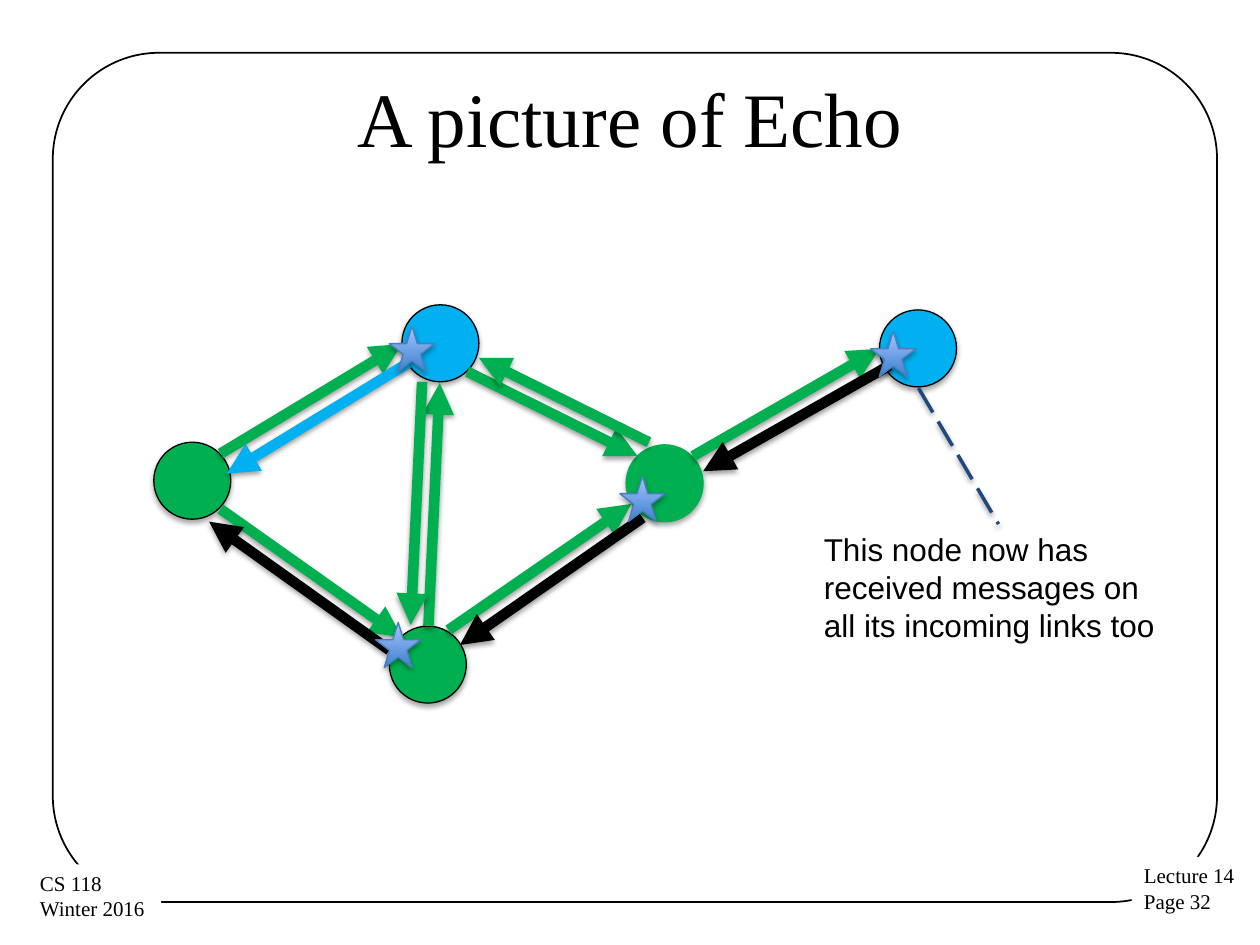
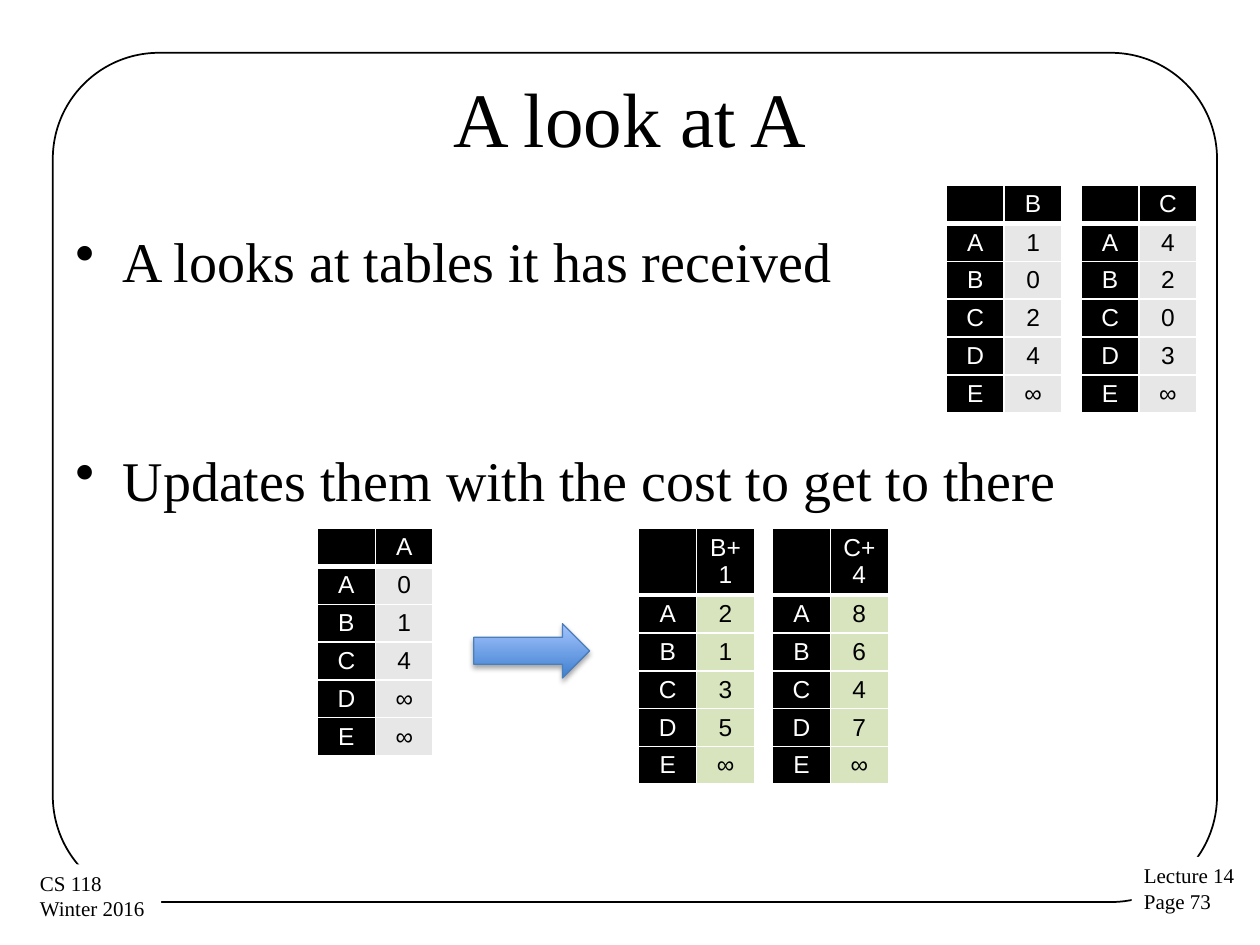
"""Builds two lecture slides: the Echo protocol graph and the distance tables at A."""
from lxml.etree import SubElement
from pptx import Presentation
from pptx.dml.color import RGBColor
from pptx.enum.dml import MSO_LINE
from pptx.enum.shapes import MSO_CONNECTOR, MSO_SHAPE
from pptx.enum.text import MSO_ANCHOR, PP_ALIGN
from pptx.oxml.ns import qn
from pptx.util import Pt

SERIF, SANS = "Times New Roman", "Arial"
BLACK, WHITE, GREEN, BLUE = "000000", "FFFFFF", "00B050", "00B0F0"
GREY, LIME, NAVY, EDGE = "E7E7E7", "D7E4BD", "1F497D", "4B7EBC"
DARK, LIGHT = "3F80CE", "A4C4FF"

COURSE = ["CS 118", "Winter 2016"]
LECTURE = "Lecture 14"

NODE, STAR = 44, 25.9
NODES = [
    (87.9, 252.7, GREEN, BLACK),
    (229.7, 174.2, BLUE, BLACK),
    (357.8, 254.2, GREEN, GREEN),
    (502.6, 177.1, BLUE, BLACK),
    (222.5, 357.8, GREEN, BLACK),
]
LINKS = [
    (126, 259.2, 229.7, 196.6, GREEN),
    (267.1, 212.4, 364.3, 260.6, GREEN),
    (126, 290.9, 229.7, 364.3, GREEN),
    (396, 260.6, 502.6, 199.4, GREEN),
    (256.3, 360, 360.7, 288, GREEN),
    (244.8, 357.8, 251.3, 218.9, GREEN),
    (233.3, 207.4, 129.6, 270.7, BLUE),
    (241.2, 218.2, 234.7, 357.1, GREEN),
    (370.8, 252.7, 273.6, 204.5, GREEN),
    (367.2, 295.9, 262.8, 368.6, BLACK),
    (508.3, 208.8, 401.8, 269.3, BLACK),
    (222.5, 371.5, 119.5, 298.1, BLACK),
]
STARS = [(222.5, 186.5), (214.6, 355.7), (354.2, 272.2), (497.5, 189.4)]
NOTE = ["This node now has", "received messages on all its incoming links too"]

POINTS = ["A looks at tables it has received", "Updates them with the cost to get to there"]
COL, HEAD, ROW = 33.1, 22, 21
TABLES = [
    (617.8, 105.8, "C", "4203∞", GREY),
    (540.7, 105.8, "B", "1024∞", GREY),
    (181.4, 301.7, "A", "014∞∞", GREY),
    (441.4, 301.7, "C+4", "8647∞", LIME),
    (365, 301.7, "B+1", "2135∞", LIME),
]


def rgb(code):
    """Turn a hex string into a colour."""
    return RGBColor.from_string(code)


def paint(fill, code):
    """Give a fill one solid colour."""
    fill.solid()
    fill.fore_color.rgb = rgb(code)


def style(para, size, face, code, align=PP_ALIGN.LEFT):
    """Set the font and alignment of a paragraph."""
    font = para.font
    font.size, font.name, font.color.rgb = Pt(size), face, rgb(code)
    para.alignment = align


def write(slide, box, lines, size, face, align=PP_ALIGN.LEFT, wrap=True):
    """Add a text box with one paragraph per line."""
    item = slide.shapes.add_textbox(*map(Pt, box))
    frame = item.text_frame
    frame.word_wrap = wrap
    frame.text = "\n".join(lines)
    for para in frame.paragraphs:
        style(para, size, face, BLACK, align)
    return item


def shade(item, alpha, dist):
    """Put a soft black shadow below a shape or connector."""
    effects = SubElement(item._element.spPr, qn("a:effectLst"))
    outer = SubElement(effects, qn("a:outerShdw"), blurRad=str(Pt(3.1)),
                       dist=str(Pt(dist)), dir="5400000", rotWithShape="0")
    tint = SubElement(outer, qn("a:srgbClr"), val=BLACK)
    SubElement(tint, qn("a:alpha"), val=str(alpha * 1000))


def draw(slide, kind, box, fill, edge):
    """Add a shadowed shape, with the blue gradient if no fill is given."""
    item = slide.shapes.add_shape(kind, *map(Pt, box))
    if fill:
        paint(item.fill, fill)
    else:
        item.fill.gradient()
        item.fill.gradient_angle = 90
        for stop, code, place in zip(item.fill.gradient_stops, (DARK, LIGHT), (0, 1)):
            stop.color.rgb, stop.position = rgb(code), place
    item.line.color.rgb, item.line.width = rgb(edge), Pt(0.75)
    shade(item, 35, 1.8)


def link(slide, ends, code, width, goal=None):
    """Add an arrow, or a dashed line that is joined to the top of a goal."""
    item = slide.shapes.add_connector(MSO_CONNECTOR.STRAIGHT, *map(Pt, ends))
    item.line.color.rgb, item.line.width = rgb(code), Pt(width)
    if goal:
        item.line.dash_style = MSO_LINE.LONG_DASH
        item.end_connect(goal, 0)
    else:
        SubElement(item.line._ln, qn("a:tailEnd"), type="triangle")
    shade(item, 38, 1.6)


def start(deck, title, page):
    """Add a slide with the frame, the footers and a title."""
    slide = deck.slides.add_slide(deck.slide_layouts[6])
    frame = slide.shapes.add_shape(MSO_SHAPE.ROUNDED_RECTANGLE,
                                   *map(Pt, (30.2, 30.2, 665.3, 485.3)))
    frame.adjustments[0] = 0.125
    frame.shadow.inherit = False
    frame.fill.background()
    frame.line.color.rgb, frame.line.width = rgb(BLACK), Pt(1)
    for box, lines in (((646.6, 489.6, 67, 36.7), [LECTURE, f"Page {page}"]),
                       ((15.8, 493.9, 76.3, 36.7), COURSE)):
        paint(write(slide, box, lines, 12, SERIF, wrap=False).fill, WHITE)
    head = write(slide, (36, 21.6, 648, 90), [title], 44, SERIF, PP_ALIGN.CENTER)
    head.text_frame.vertical_anchor = MSO_ANCHOR.MIDDLE
    return slide


def border(cell, base):
    """Draw white lines around a cell."""
    props = cell._tc.get_or_add_tcPr()
    for side, width in (("L", 1), ("R", 1), ("T", 1), ("B", base)):
        line = SubElement(props, qn(f"a:ln{side}"), w=str(Pt(width)))
        fill = SubElement(line, qn("a:solidFill"))
        SubElement(fill, qn("a:srgbClr"), val=WHITE)


def tabulate(slide, left, top, name, costs, tint):
    """Add a table of the costs to reach each node."""
    rows = [("", name), *zip("ABCDE", costs)]
    size = (2 * COL, HEAD + ROW * len(costs))
    table = slide.shapes.add_table(len(rows), 2, *map(Pt, (left, top, *size))).table
    for col in table.columns:
        col.width = Pt(COL)
    for r, row in enumerate(rows):
        table.rows[r].height = Pt(ROW if r else HEAD)
        for c, text in enumerate(row):
            cell = table.cell(r, c)
            body = r > 0 and c > 0
            cell.margin_left = cell.margin_right = Pt(5)
            cell.margin_top = cell.margin_bottom = Pt(2.4)
            cell.vertical_anchor = MSO_ANCHOR.MIDDLE
            border(cell, 1 if r else 3)
            paint(cell.fill, tint if body else BLACK)
            para = cell.text_frame.paragraphs[0]
            if text:
                para.text = text
            else:
                para._p.get_or_add_endParaRPr().set("sz", "1400")
            style(para, 14, SANS, BLACK if body else WHITE, PP_ALIGN.CENTER)


def echo(deck):
    """Build the slide with the Echo graph."""
    slide = start(deck, "A picture of Echo", 32)
    for left, top, fill, edge in NODES:
        draw(slide, MSO_SHAPE.OVAL, (left, top, NODE, NODE), fill, edge)
    for *ends, code in LINKS:
        link(slide, ends, code, 6)
    for left, top in STARS:
        draw(slide, MSO_SHAPE.STAR_5_POINT, (left, top, STAR, STAR), None, EDGE)
    note = write(slide, (463.7, 299.5, 213.8, 72.7), NOTE, 18, SANS)
    link(slide, (524.9, 221.8, 570.6, 299.5), NAVY, 2, note)


def look(deck):
    """Build the slide with the tables that A sees."""
    slide = start(deck, "A look at A", 73)
    body = write(slide, (36, 126, 648, 356.4), POINTS, 32, SERIF)
    paras = body.text_frame.paragraphs
    for para in paras:
        props = para._p.get_or_add_pPr()
        props.set("marL", str(Pt(27)))
        props.set("indent", str(Pt(-27)))
        mark = SubElement(props, qn("a:buChar"), char="•")
        props.insert(0, mark)
    paras[1].space_before = Pt(86.5)
    for spot in TABLES:
        tabulate(slide, *spot)
    draw(slide, MSO_SHAPE.RIGHT_ARROW, (270.7, 356.4, 66.2, 31), None, EDGE)


def main():
    """Build and save the deck."""
    deck = Presentation()
    deck.slide_width, deck.slide_height = Pt(720), Pt(540)
    echo(deck)
    look(deck)
    deck.save("out.pptx")


if __name__ == "__main__":
    main()
